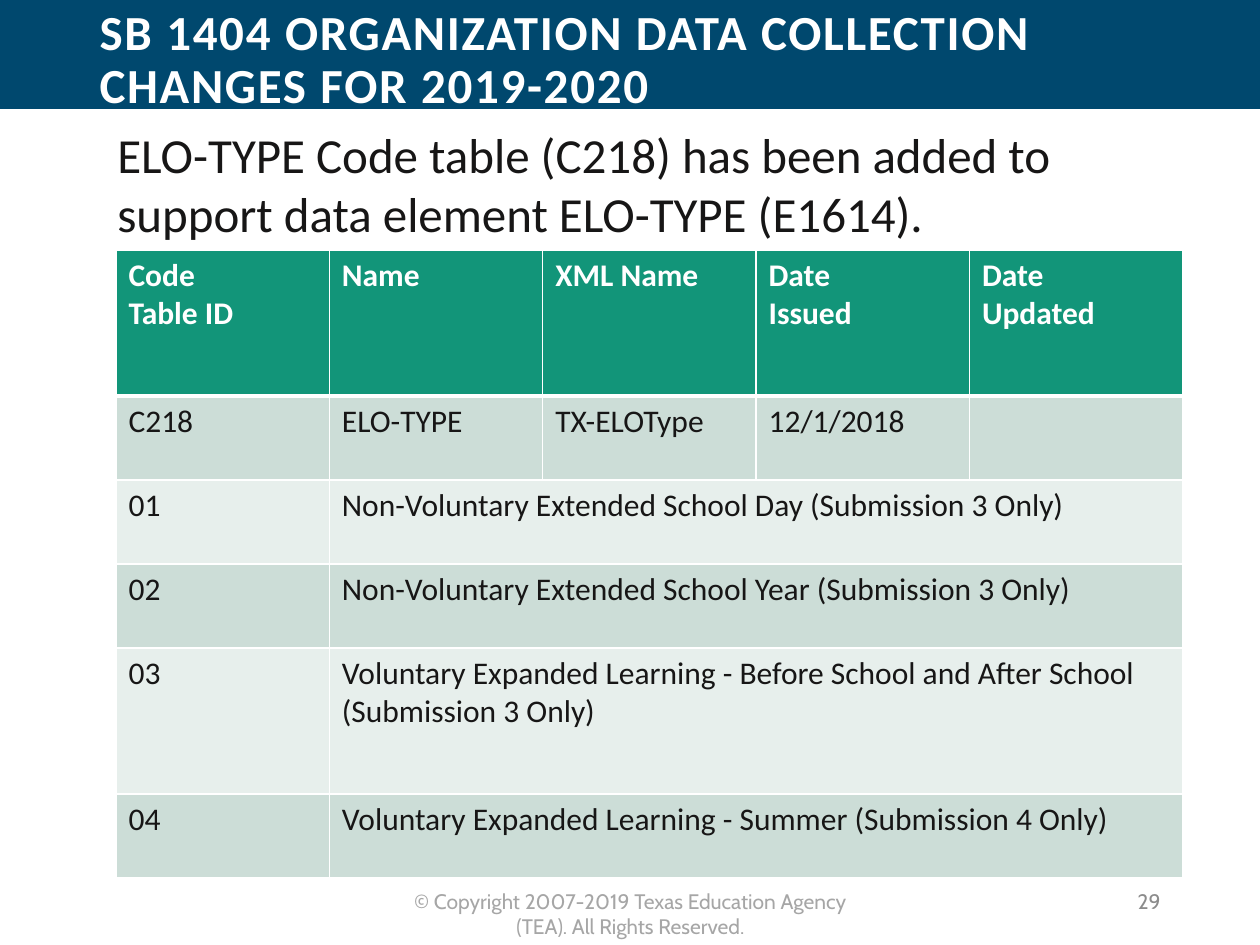
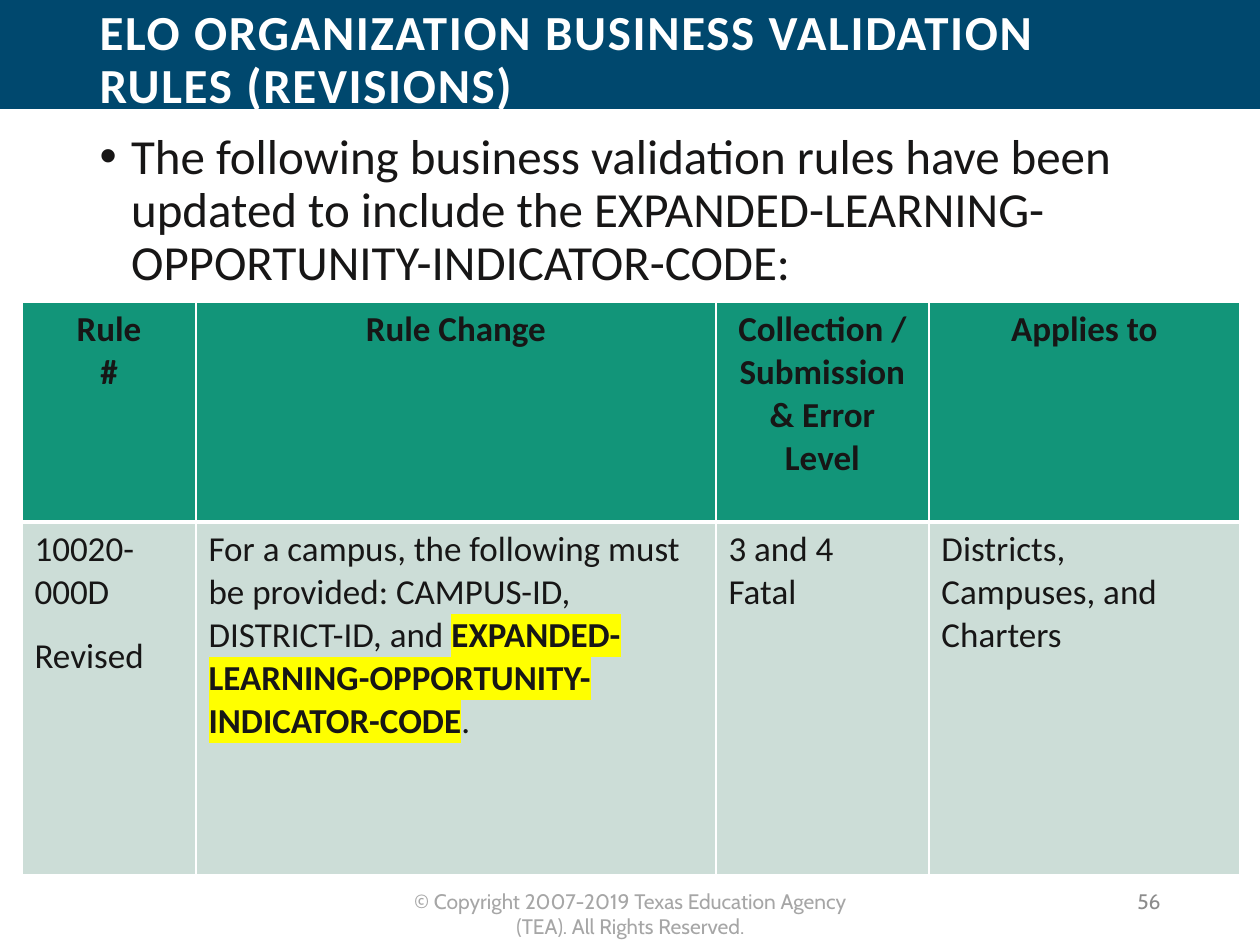
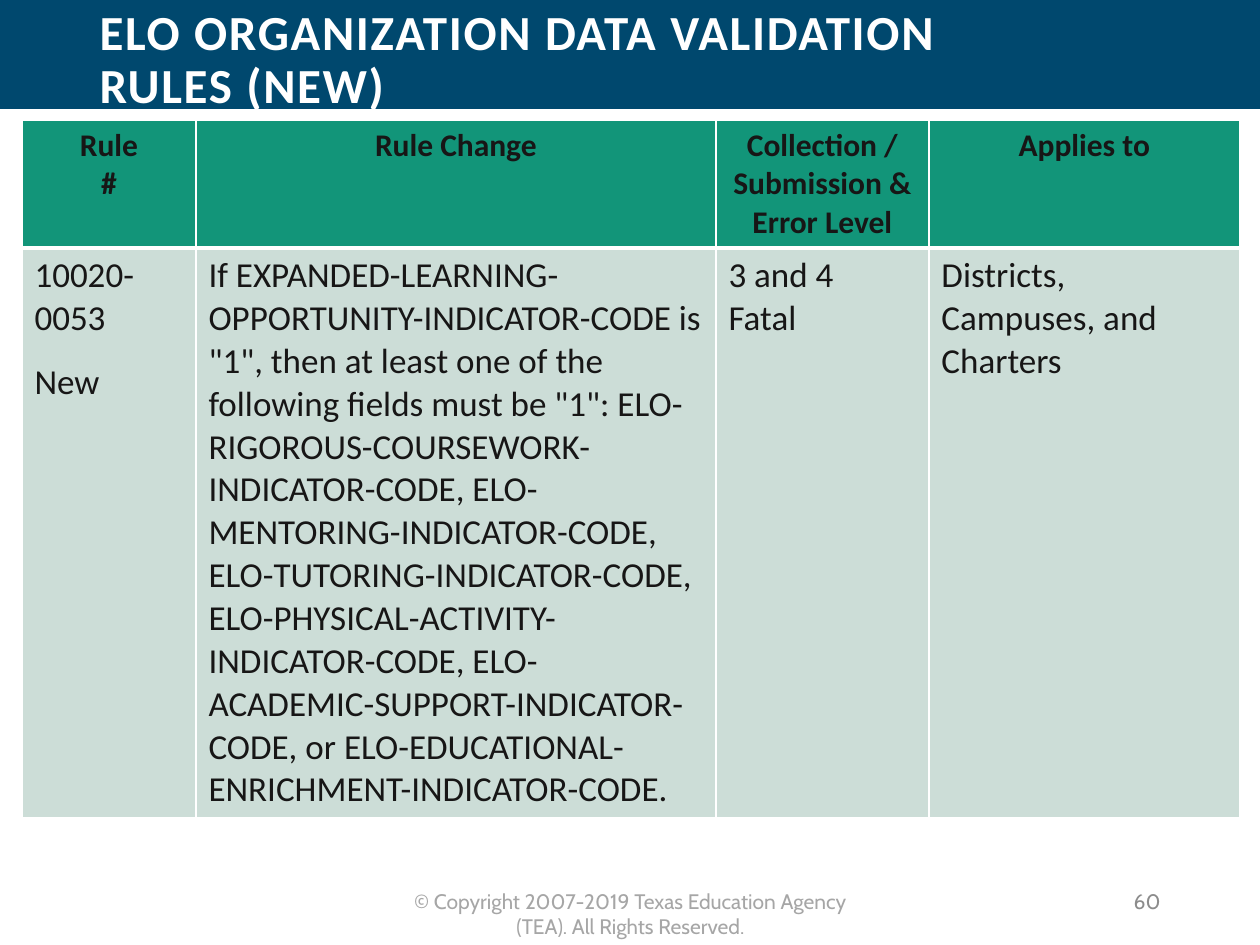
from lxml.etree import SubElement
from pptx import Presentation
from pptx.dml.color import RGBColor
from pptx.enum.shapes import MSO_SHAPE as SHAPE
from pptx.enum.text import MSO_ANCHOR as ANCHOR, MSO_AUTO_SIZE as FIT, PP_ALIGN as ALIGN
from pptx.oxml import parse_xml
from pptx.oxml.ns import nsdecls, qn
from pptx.util import Emu, Pt

COLORS = {
    "band": "00486E", "header": "129579", "row": "CCDDD7", "row_alt": "E7EFEC",
    "text": "171616", "white": "FFFFFF", "footer": "A6A6A6", "number": "8C8C8C",
    "highlight": "FFFF00",
}
FONT, FOOTER_FONT = "Calibri", "Cabin"
FOOTER = "© Copyright 2007-2019 Texas Education Agency (TEA). All Rights Reserved."

RULE_HEADER = ["Rule\n#", "Rule Change", "Collection / Submission & Error Level", "Applies to"]
RULE_SCOPE = ["3 and 4\nFatal", "Districts, Campuses, and Charters"]
RULE_COLS = [174, 520, 213, 311]

# In table text, a line break starts a paragraph and *stars* mark highlighted words.
# A row shorter than the header spreads its last cell to the right edge.
SLIDES = [
    {
        "title": "SB 1404 ORGANIZATION DATA COLLECTION CHANGES FOR 2019-2020",
        "number": "29",
        "intro": "ELO-TYPE Code table (C218) has been added to support data element "
                 "ELO-TYPE (E1614).",
        "table": {
            "at": (116, 250, 1067), "cols": [1] * 5,
            "heights": [146, 84, 84, 84, 146, 84],
            "sizes": (18, 18), "header_color": "white", "header_align": ALIGN.LEFT,
            "rows": [
                ["Code\nTable ID", "Name", "XML Name", "Date\nIssued", "Date\nUpdated"],
                ["C218", "ELO-TYPE", "TX-ELOType", "12/1/2018", ""],
                ["01", "Non-Voluntary Extended School Day (Submission 3 Only)"],
                ["02", "Non-Voluntary Extended School Year (Submission 3 Only)"],
                ["03", "Voluntary Expanded Learning - Before School and After School "
                       "(Submission 3 Only)"],
                ["04", "Voluntary Expanded Learning - Summer (Submission 4 Only)"],
            ],
        },
    },
    {
        "title": "ELO ORGANIZATION BUSINESS VALIDATION RULES (REVISIONS)",
        "number": "56",
        "bullet": "The following business validation rules have been updated to include "
                  "the EXPANDED-LEARNING-OPPORTUNITY-INDICATOR-CODE:",
        "table": {
            "at": (22, 302, 1218), "cols": RULE_COLS, "heights": [220, 353],
            "sizes": (20, 20), "header_color": "text", "header_align": ALIGN.CENTER,
            "rows": [
                RULE_HEADER,
                ["10020-000D\nRevised",
                 "For a campus, the following must be provided: CAMPUS-ID, DISTRICT-ID, "
                 "and *EXPANDED-LEARNING-OPPORTUNITY-INDICATOR-CODE*.",
                 *RULE_SCOPE],
            ],
        },
    },
    {
        "title": "ELO ORGANIZATION DATA VALIDATION RULES (NEW)",
        "number": "60",
        "table": {
            "at": (22, 120, 1218), "cols": RULE_COLS, "heights": [128, 569],
            "sizes": (18, 20), "header_color": "text", "header_align": ALIGN.CENTER,
            "rows": [
                RULE_HEADER,
                ["10020-0053\nNew",
                 'If EXPANDED-LEARNING-OPPORTUNITY-INDICATOR-CODE is "1", then at least '
                 'one of the following fields must be "1": '
                 "ELO-RIGOROUS-COURSEWORK-INDICATOR-CODE, ELO-MENTORING-INDICATOR-CODE, "
                 "ELO-TUTORING-INDICATOR-CODE, ELO-PHYSICAL-ACTIVITY-INDICATOR-CODE, "
                 "ELO-ACADEMIC-SUPPORT-INDICATOR-CODE, or "
                 "ELO-EDUCATIONAL-ENRICHMENT-INDICATOR-CODE.",
                 *RULE_SCOPE],
            ],
        },
    },
]


def px(n):
    return Emu(round(n * 914400 / 126))


def rgb(name):
    return RGBColor.from_string(COLORS[name])


def style(font, size, color, bold=False, name=FONT):
    font.size, font.bold, font.name = Pt(size), bold, name
    font.color.rgb = rgb(color)


def fill_text(sp, text, size, color, bold=False, name=FONT, align=ALIGN.LEFT, anchor=ANCHOR.TOP):
    """Put one styled paragraph in a shape and return the paragraph."""
    tf = sp.text_frame
    tf.text = text
    tf.word_wrap, tf.auto_size, tf.vertical_anchor = True, FIT.NONE, anchor
    p = tf.paragraphs[0]
    p.alignment = align
    style(p.runs[0].font, size, color, bold, name)
    return p


def place(sp, *box):
    sp.left, sp.top, sp.width, sp.height = map(px, box)


def add_text(slide, box, text, size, color, **options):
    sp = slide.shapes.add_textbox(*map(px, box))
    fill_text(sp, text, size, color, **options)
    return sp


def move_to_master(prs, *shapes):
    tree = prs.slide_master.shapes.element
    for i, sp in enumerate(shapes):
        tree.insert(2 + i, sp.element)


def add_band_and_footer(prs, slide):
    band = slide.shapes.add_shape(SHAPE.RECTANGLE, 0, 0, prs.slide_width, px(109))
    band.shadow.inherit = False
    band.fill.solid()
    band.fill.fore_color.rgb = rgb("band")
    band.line.fill.background()
    footer = add_text(slide, (383, 882, 495, 38), FOOTER, 12, "footer",
                      name=FOOTER_FONT, align=ALIGN.CENTER)
    move_to_master(prs, band, footer)


def set_title(slide, text):
    place(slide.shapes.title, 87, 6, 1008, 110)
    p = fill_text(slide.shapes.title, text, 28, "white", bold=True, anchor=ANCHOR.MIDDLE)
    p.line_spacing = 0.9
    p.runs[0].font._element.set("spc", "100")


def set_bullet(slide, text):
    sp = slide.placeholders[1]
    place(sp, 87, 126, 1086, 766)
    p = fill_text(sp, text, 28, "text")
    pPr = p._p.get_or_add_pPr()
    pPr.set("marL", "228600")
    pPr.set("indent", "-228600")
    SubElement(pPr, qn("a:buChar")).set("char", "•")
    p.line_spacing = 0.9
    p.space_before = Pt(0)


def set_borders(cell, top, bottom):
    """Draw white cell edges; top and bottom are widths in points."""
    tcPr = cell._tc.get_or_add_tcPr()
    for i, (edge, width) in enumerate([("L", 1), ("R", 1), ("T", top), ("B", bottom)]):
        tcPr.insert(i, parse_xml(
            f'<a:ln{edge} {nsdecls("a")} w="{Pt(width)}"><a:solidFill>'
            f'<a:srgbClr val="{COLORS["white"]}"/></a:solidFill></a:ln{edge}>'))


def highlight(r):
    mark = parse_xml(f'<a:highlight {nsdecls("a")}>'
                     f'<a:srgbClr val="{COLORS["highlight"]}"/></a:highlight>')
    r.font._element.find(qn("a:solidFill")).addnext(mark)


def fill_cell(cell, text, size, color, bold, align, gap):
    for i, line in enumerate(text.split("\n")):
        tf = cell.text_frame
        p = tf.add_paragraph() if i else tf.paragraphs[0]
        p.alignment = align
        if i:
            p.space_before = Pt(gap)
        for j, part in enumerate(line.split("*")):
            r = p.add_run()
            r.text = part
            style(r.font, size, color, bold or j % 2 == 1)
            if j % 2:
                highlight(r)


def add_table(slide, at, cols, heights, sizes, header_color, header_align, rows):
    left, top, width = at
    table = slide.shapes.add_table(len(rows), len(cols), px(left), px(top),
                                   px(width), px(sum(heights))).table
    for column, share in zip(table.columns, cols):
        column.width = px(width * share / sum(cols))
    for i, (texts, height) in enumerate(zip(rows, heights)):
        table.rows[i].height = px(height)
        header = i == 0
        fill = "header" if header else "row" if i % 2 else "row_alt"
        for j in range(len(cols)):
            cell = table.cell(i, j)
            cell.fill.solid()
            cell.fill.fore_color.rgb = rgb(fill)
            set_borders(cell, top=3 if i == 1 else 1, bottom=3 if header else 1)
        for j, text in enumerate(texts):
            if not text:
                continue
            if header:
                fill_cell(table.cell(i, j), text, sizes[0], header_color, True, header_align, 0)
            else:
                fill_cell(table.cell(i, j), text, sizes[1], "text", False, ALIGN.LEFT,
                          0 if j else 12)
        if len(texts) < len(cols):
            table.cell(i, len(texts) - 1).merge(table.cell(i, len(cols) - 1))


def main():
    prs = Presentation()
    prs.slide_width, prs.slide_height = px(1260), px(945)
    for n, content in enumerate(SLIDES):
        layout = prs.slide_layouts[1 if "bullet" in content else 5]
        slide = prs.slides.add_slide(layout)
        if n == 0:
            add_band_and_footer(prs, slide)
        set_title(slide, content["title"])
        if "bullet" in content:
            set_bullet(slide, content["bullet"])
        add_table(slide, **content["table"])
        if "intro" in content:
            add_text(slide, (105, 118, 1008, 170), content["intro"], 28, "text")
        add_text(slide, (890, 876, 283, 50), content["number"], 12, "number",
                 name=FOOTER_FONT, align=ALIGN.RIGHT, anchor=ANCHOR.MIDDLE)
    prs.save("out.pptx")


if __name__ == "__main__":
    main()
